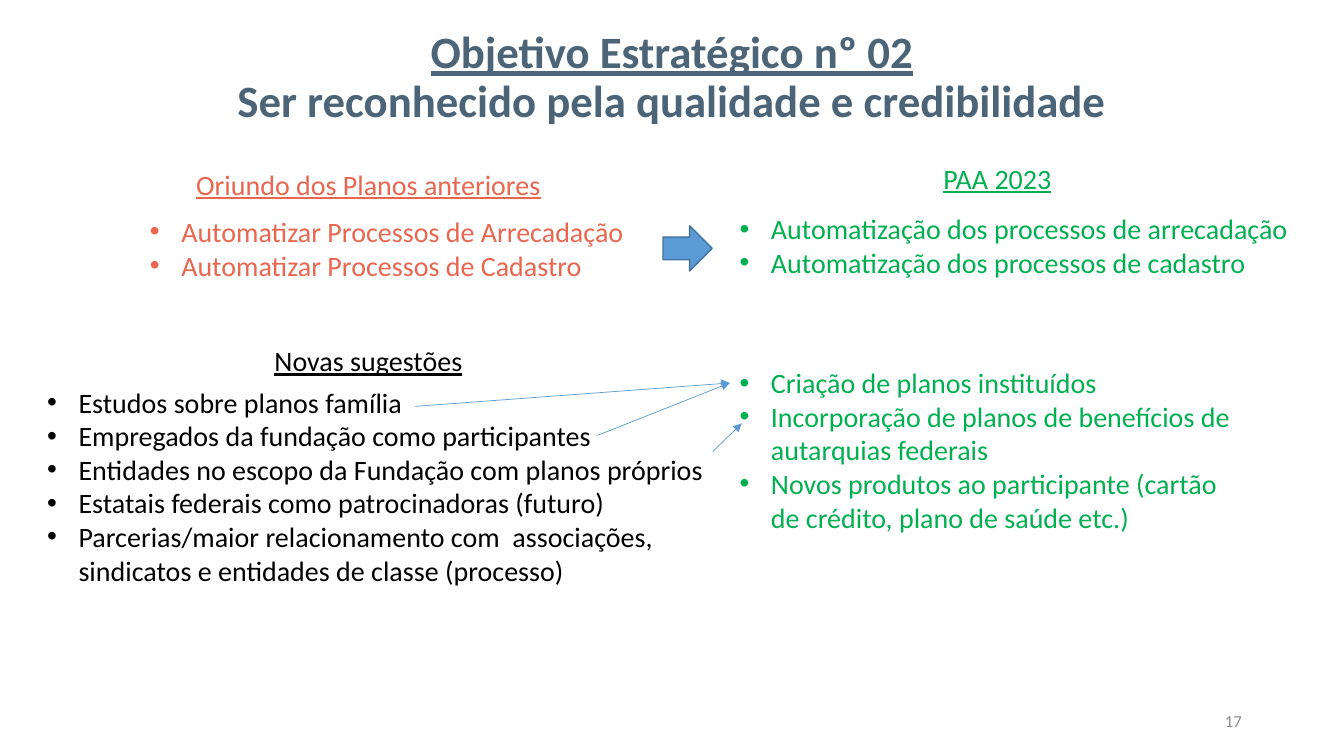
import lxml.etree
import pptx
import pptx.dml.color
import pptx.enum.shapes
import pptx.enum.text
import pptx.oxml.ns
import pptx.util

Cm = pptx.util.Cm
Pt = pptx.util.Pt
RGBColor = pptx.dml.color.RGBColor
ALIGN = pptx.enum.text.PP_ALIGN
qn = pptx.oxml.ns.qn

SLATE = RGBColor(0x4B, 0x64, 0x78)
CORAL = RGBColor(0xEA, 0x66, 0x4F)
GREEN = RGBColor(0x00, 0xB0, 0x50)
BLACK = RGBColor(0x00, 0x00, 0x00)
GREY = RGBColor(0x8C, 0x8C, 0x8C)
BLUE = RGBColor(0x5B, 0x9B, 0xD5)
DARK_BLUE = RGBColor(0x43, 0x73, 0x9E)

FONT = "Calibri"
INDENT = Cm(0.79)
RIGHT_COLUMN = 18.39
HEADING_WIDTH = 13.49


def style(paragraph, size, color, align, bold=False, underline=False):
    paragraph.alignment = align
    font = paragraph.font
    font.name = FONT
    font.size = Pt(size)
    font.color.rgb = color
    font.bold = bold
    font.underline = underline


def add_bullet(paragraph):
    properties = paragraph._p.get_or_add_pPr()
    properties.set("marL", str(INDENT))
    properties.set("indent", str(-INDENT))
    lxml.etree.SubElement(properties, qn("a:buFont")).set("typeface", "Arial")
    lxml.etree.SubElement(properties, qn("a:buChar")).set("char", "•")


def add_frame(slide, left, top, width, height, wrap=True):
    box = slide.shapes.add_textbox(Cm(left), Cm(top), Cm(width), Cm(height))
    box.text_frame.word_wrap = wrap
    return box.text_frame


def add_title(slide, heading, objective):
    title = slide.shapes.title
    title.left, title.top = Cm(0), Cm(0.48)
    title.width, title.height = Cm(33.87), Cm(3)
    frame = title.text_frame
    frame.vertical_anchor = pptx.enum.text.MSO_ANCHOR.MIDDLE
    frame.text = f"{heading}\n{objective}"
    for paragraph in frame.paragraphs:
        paragraph.line_spacing = 0.9
        style(paragraph, 32, SLATE, ALIGN.CENTER, bold=True,
              underline=paragraph.text == heading)


def add_heading(slide, left, top, text, color):
    frame = add_frame(slide, left, top, HEADING_WIDTH, 1.12)
    frame.text = text
    style(frame.paragraphs[0], 20, color, ALIGN.CENTER, underline=True)


def add_list(slide, area, items, color, align=ALIGN.LEFT, wrap=True):
    frame = add_frame(slide, *area, wrap=wrap)
    frame.text = "\n".join(items)
    for paragraph in frame.paragraphs:
        add_bullet(paragraph)
        style(paragraph, 20, color, align)


def add_block_arrow(slide, left, top, width, height):
    arrow = slide.shapes.add_shape(
        pptx.enum.shapes.MSO_SHAPE.RIGHT_ARROW,
        Cm(left), Cm(top), Cm(width), Cm(height))
    arrow.shadow.inherit = False
    arrow.fill.solid()
    arrow.fill.fore_color.rgb = BLUE
    arrow.line.color.rgb = DARK_BLUE
    arrow.line.width = Pt(1)


def add_link(slide, start, end):
    """Draw a thin arrow from a suggestion to the plan item it led to."""
    link = slide.shapes.add_connector(
        pptx.enum.shapes.MSO_CONNECTOR.STRAIGHT,
        Cm(start[0]), Cm(start[1]), Cm(end[0]), Cm(end[1]))
    link.line.color.rgb = BLUE
    link.line.width = Pt(0.5)
    outline = link.line._get_or_add_ln()
    lxml.etree.SubElement(outline, qn("a:tailEnd")).set("type", "triangle")
    lxml.etree.SubElement(link._element.spPr, qn("a:effectLst"))


def add_page_number(slide, number):
    frame = add_frame(slide, 23.93, 17.65, 7.62, 1.02)
    frame.vertical_anchor = pptx.enum.text.MSO_ANCHOR.MIDDLE
    frame.text = number
    style(frame.paragraphs[0], 12, GREY, ALIGN.RIGHT)


def main():
    presentation = pptx.Presentation()
    presentation.slide_width = Cm(33.87)
    presentation.slide_height = Cm(19.05)
    slide = presentation.slides.add_slide(presentation.slide_layouts[5])

    add_title(slide, "Objetivo Estratégico nº 02",
              "Ser reconhecido pela qualidade e credibilidade")

    add_heading(slide, 2.54, 4.09, "Oriundo dos Planos anteriores", CORAL)
    add_list(slide, (3.53, 5.28, 12.57, 1.96), [
        "Automatizar Processos de Arrecadação",
        "Automatizar Processos de Cadastro",
    ], CORAL, ALIGN.JUSTIFY, wrap=False)

    add_heading(slide, RIGHT_COLUMN, 3.94, "PAA 2023", GREEN)
    add_list(slide, (RIGHT_COLUMN, 5.21, 14.48, 1.96), [
        "Automatização dos processos de arrecadação",
        "Automatização dos processos de cadastro",
    ], GREEN, ALIGN.JUSTIFY, wrap=False)
    add_block_arrow(slide, 16.71, 5.69, 1.24, 1.14)

    add_heading(slide, 2.54, 8.53, "Novas sugestões", BLACK)
    add_list(slide, (0.94, 9.58, 17.15, 9.47), [
        "Estudos sobre planos família",
        "Empregados da fundação como participantes",
        "Entidades no escopo da Fundação com planos próprios",
        "Estatais federais como patrocinadoras (futuro)",
        "Parcerias/maior relacionamento com  associações, "
        "sindicatos e entidades de classe (processo)",
    ], BLACK)
    add_list(slide, (RIGHT_COLUMN, 9.09, 13.36, 4.52), [
        "Criação de planos instituídos",
        "Incorporação de planos de benefícios de autarquias federais",
        "Novos produtos ao participante (cartão de crédito, "
        "plano de saúde etc.)",
    ], GREEN)

    new_plans = (RIGHT_COLUMN, 9.65)
    add_link(slide, (10.46, 10.24), new_plans)
    add_link(slide, (15.06, 10.97), new_plans)
    add_link(slide, (17.96, 11.38), (18.69, 10.67))

    add_page_number(slide, "17")
    presentation.save("out.pptx")


if __name__ == "__main__":
    main()
